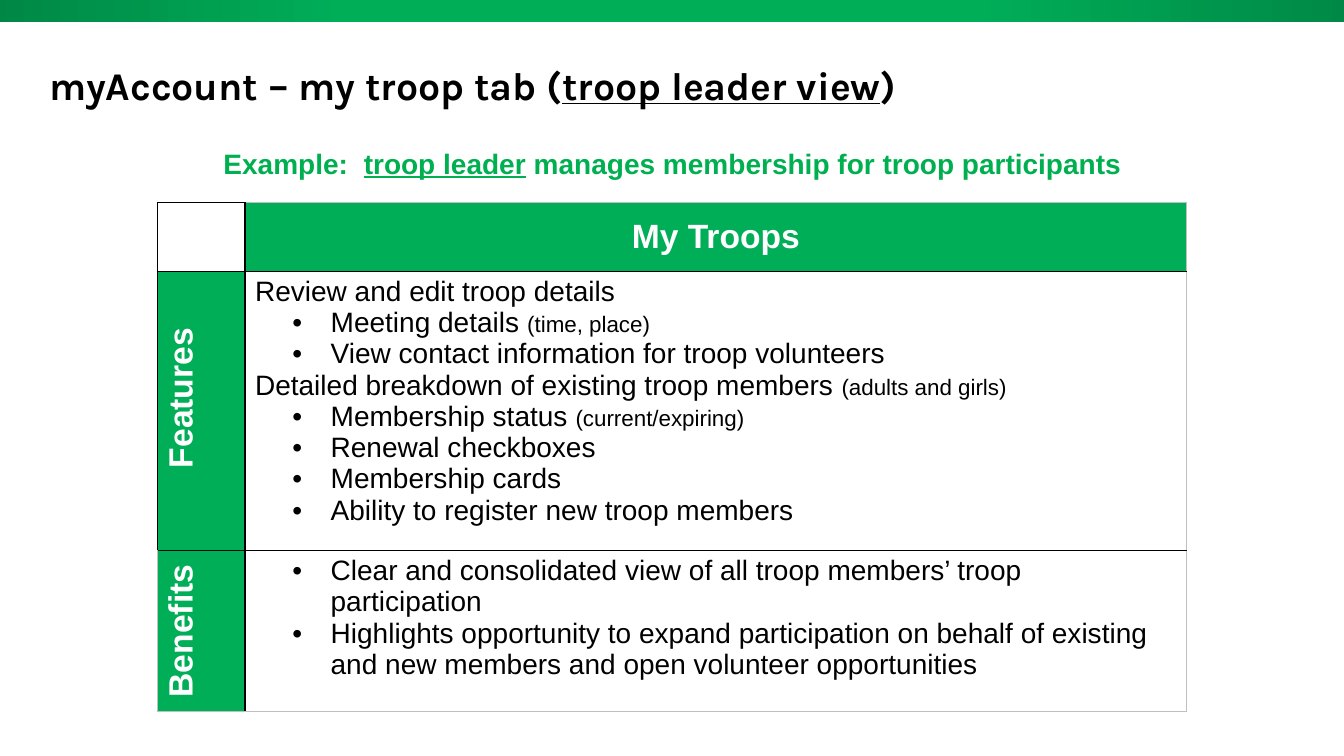
from dataclasses import dataclass

from lxml import etree
from pptx import Presentation
from pptx import util as u
from pptx.dml.color import RGBColor
from pptx.enum import shapes, text
from pptx.oxml import ns, parse_xml

COLORS = {"green": "00AE58", "dark_green": "008745", "caption": "00B050",
          "white": "FFFFFF", "black": "000000", "gray": "BFBFBF"}
BODY_FONT, TITLE_FONT = "Arial", "Karla"


@dataclass
class Run:
    text: str
    size: float
    color: str = "black"
    bold: bool = False
    underline: bool = False
    font: str = BODY_FONT


@dataclass
class Para:
    runs: list[Run]
    bullet: bool = False
    align: text.PP_ALIGN = text.PP_ALIGN.LEFT
    left: float = 0


@dataclass
class Cell:
    paras: list[Para]
    fill: str = "white"
    vertical: bool = False
    middle: bool = False


def rgb(name: str) -> RGBColor:
    return RGBColor.from_string(COLORS[name])


def write(tf, paras: list[Para]) -> None:
    for i, para in enumerate(paras):
        p = tf.paragraphs[0] if i == 0 else tf.add_paragraph()
        p.alignment = para.align
        pPr = p._p.get_or_add_pPr()
        if para.bullet:
            pPr.set("marL", str(u.Inches(0.75)))
            pPr.set("indent", str(u.Inches(-0.38)))
            etree.SubElement(pPr, ns.qn("a:buFont"), typeface=BODY_FONT)
            etree.SubElement(pPr, ns.qn("a:buChar"), char="•")
        elif para.left:
            pPr.set("marL", str(u.Inches(para.left)))
        for run in para.runs:
            r = p.add_run()
            r.text = run.text
            r.font.name, r.font.size = run.font, u.Pt(run.size)
            r.font.bold, r.font.underline = run.bold, run.underline
            r.font.color.rgb = rgb(run.color)


def set_border(cell, edge: str, color: str) -> None:
    width = u.Pt(1 if color == "black" else 0.75)
    cell._tc.get_or_add_tcPr().append(parse_xml(
        f'<a:{edge} {ns.nsdecls("a")} w="{width}"><a:solidFill>'
        f'<a:srgbClr val="{COLORS[color]}"/></a:solidFill></a:{edge}>'))


def item(main: str, note: str = "", bullet: bool = True) -> Para:
    runs = [Run(main, 20)] + ([Run(note, 16)] if note else [])
    return Para(runs, bullet)


def heading(label: str, vertical: bool = False, left: float = 0) -> Cell:
    para = Para([Run(label, 24, "white", True)], align=text.PP_ALIGN.CENTER, left=left)
    return Cell([para], "green", vertical, True)


def add_bar(s) -> None:
    sp = s.shapes.add_shape(shapes.MSO_SHAPE.RECTANGLE, u.Inches(-0.12),
                            u.Inches(-0.01), u.Inches(13.73), u.Inches(0.23))
    sp.shadow.inherit = False
    sp.line.fill.background()
    sp.fill.gradient()
    sp.fill.gradient_angle = 0
    stops = sp._element.spPr.find(ns.qn("a:gradFill")).find(ns.qn("a:gsLst"))
    for stop in list(stops):
        stops.remove(stop)
    for pos, name in ((0, "dark_green"), (26, "green"), (71, "green"), (100, "dark_green")):
        gs = etree.SubElement(stops, ns.qn("a:gs"), pos=str(pos * 1000))
        etree.SubElement(gs, ns.qn("a:srgbClr"), val=COLORS[name])


def add_table(s, grid: list[list[Cell]], cols: list[float], rows: list[float]) -> None:
    table = s.shapes.add_table(len(rows), len(cols), u.Inches(1.56), u.Inches(2.01),
                               u.Inches(sum(cols)), u.Inches(sum(rows))).table
    table.first_row = table.horz_banding = False
    for i, width in enumerate(cols):
        table.columns[i].width = u.Inches(width)
    for i, height in enumerate(rows):
        table.rows[i].height = u.Inches(height)
    last_row, last_col = len(rows) - 1, len(cols) - 1
    for y, line in enumerate(grid):
        for x, spec_cell in enumerate(line):
            cell = table.cell(y, x)
            write(cell.text_frame, spec_cell.paras)
            # Inner edges are black; the outer frame is mostly gray
            blacks = {"lnL": x > 0 or y < last_row, "lnR": x < last_col,
                      "lnT": y > 0 or x == 0, "lnB": y < last_row}
            for edge, black in blacks.items():
                set_border(cell, edge, "black" if black else "gray")
            cell.fill.solid()
            cell.fill.fore_color.rgb = rgb(spec_cell.fill)
            if spec_cell.middle:
                cell.vertical_anchor = text.MSO_ANCHOR.MIDDLE
            if spec_cell.vertical:
                cell._tc.get_or_add_tcPr().set("vert", "vert270")


FEATURES = [
    item("Review and edit troop details", bullet=False),
    item("Meeting details ", "(time, place)"),
    item("View contact information for troop volunteers"),
    item("Detailed breakdown of existing troop members ", "(adults and girls)", False),
    item("Membership status ", "(current/expiring)"),
    item("Renewal checkboxes"),
    item("Membership cards"),
    item("Ability to register new troop members"),
]
BENEFITS = [
    item("Clear and consolidated view of all troop members’ troop participation"),
    item("Highlights opportunity to expand participation on behalf of existing "
         "and new members and open volunteer opportunities"),
]


def main() -> None:
    prs = Presentation()
    prs.slide_width, prs.slide_height = u.Inches(13.33), u.Inches(7.5)
    s = prs.slides.add_slide(prs.slide_layouts[5])

    # Top bar
    add_bar(s)

    # Title
    title = s.shapes.title
    title.left, title.top = u.Inches(0.49), u.Inches(0.5)
    title.width, title.height = u.Inches(12.24), u.Inches(0.69)
    tf = title.text_frame
    tf.margin_left = tf.margin_right = tf.margin_top = tf.margin_bottom = 0
    tf.auto_size = text.MSO_AUTO_SIZE.NONE
    tf.vertical_anchor = text.MSO_ANCHOR.MIDDLE
    write(tf, [Para([Run(words, 28, bold=True, underline=line, font=TITLE_FONT)
                     for words, line in (("myAccount – my troop tab (", False),
                                         ("troop leader view", True), (")", False))])])

    # Features and benefits table
    add_table(s, [[Cell([]), heading("My Troops")],
                  [heading("Features", True, 0.25), Cell(FEATURES)],
                  [heading("Benefits", True), Cell(BENEFITS)]],
              cols=[0.87, 9.34], rows=[0.68, 2.77, 1.6])

    # Caption above the table
    tf = s.shapes.add_textbox(u.Inches(0.9), u.Inches(1.4),
                              u.Inches(11.54), u.Inches(0.44)).text_frame
    tf.word_wrap = True
    write(tf, [Para([Run(words, 20, "caption", True, line)
                     for words, line in (("Example:  ", False), ("troop leader", True),
                                         (" manages membership for troop participants", False))],
                    align=text.PP_ALIGN.CENTER)])

    prs.save("out.pptx")


if __name__ == "__main__":
    main()
